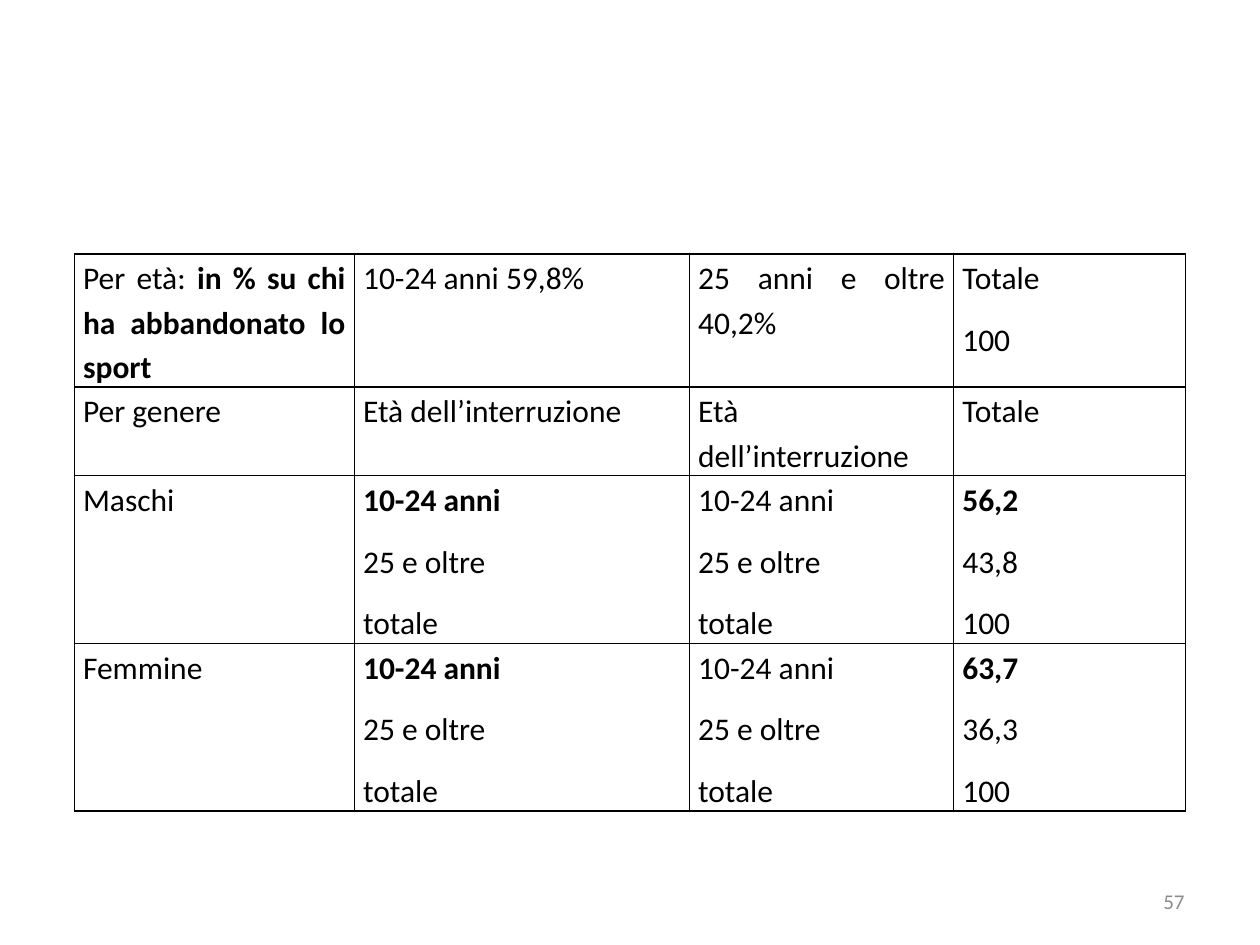
from lxml import etree
from pptx import Presentation
from pptx.dml.color import RGBColor
from pptx.enum.text import MSO_ANCHOR, PP_ALIGN
from pptx.oxml.ns import qn
from pptx.util import Pt

JUSTIFY, RIGHT = PP_ALIGN.JUSTIFY, PP_ALIGN.RIGHT
TOP, MIDDLE = MSO_ANCHOR.TOP, MSO_ANCHOR.MIDDLE
FONT = "Calibri"
COLORS = {"text": "000000", "border": "000000", "page_number": "8C8C8C"}
COLUMN_WIDTHS = [160, 191.5, 151, 132.5]
ROW_HEIGHTS = [76, 50.5, 95.5, 95.5]
AGE_GROUPS = ["10-24 anni", "25 e oltre", "totale"]
INTERRUPTION = ["Età dell’interruzione"]


def gender_row(gender, shares):
    """Return the cells of one gender, with the youngest group in bold."""
    bold_first = [[f"**{column[0]}**", *column[1:]] for column in (AGE_GROUPS, shares)]
    return [[gender], bold_first[0], AGE_GROUPS, bold_first[1]]


ROWS = [
    [["Per età: **in % su chi ha abbandonato lo sport**"], ["10-24 anni 59,8%"],
     ["25 anni e oltre 40,2%"], ["Totale", "100"]],
    [["Per genere"], INTERRUPTION, INTERRUPTION, ["Totale"]],
    gender_row("Maschi", ["56,2", "43,8", "100"]),
    gender_row("Femmine", ["63,7", "36,3", "100"]),
]


def style_run(run, size, color, bold=False):
    """Apply font, size, colour and weight to a run."""
    run.font.name = FONT
    run.font.size = Pt(size)
    run.font.bold = bold
    run.font.color.rgb = RGBColor.from_string(COLORS[color])


def write_paragraph(paragraph, marked_text):
    """Write a justified paragraph whose ** marks enclose bold text."""
    paragraph.alignment = JUSTIFY
    paragraph.line_spacing = 1.15
    paragraph.space_after = Pt(10)
    for index, part in enumerate(marked_text.split("**")):
        if part:
            run = paragraph.add_run()
            run.text = part
            style_run(run, 18, "text", bold=index % 2 == 1)


def add_borders(cell):
    """Draw a thin line on all four sides of a cell."""
    properties = cell._tc.get_or_add_tcPr()
    for index, side in enumerate(("a:lnL", "a:lnR", "a:lnT", "a:lnB")):
        line = etree.Element(qn(side), w=str(Pt(1)))
        fill = etree.SubElement(line, qn("a:solidFill"))
        etree.SubElement(fill, qn("a:srgbClr"), val=COLORS["border"])
        properties.insert(index, line)


def fill_cell(cell, lines):
    """Format a cell and write its lines as paragraphs."""
    cell.fill.background()
    cell.margin_left = cell.margin_right = Pt(5)
    cell.margin_top = cell.margin_bottom = Pt(0)
    cell.vertical_anchor = TOP
    add_borders(cell)
    cell.text_frame.text = "\n".join([""] * len(lines))
    for paragraph, line in zip(cell.text_frame.paragraphs, lines):
        write_paragraph(paragraph, line)


def add_dropout_table(slide):
    """Add the table of sport dropout by age and gender."""
    table = slide.shapes.add_table(
        len(ROWS), len(COLUMN_WIDTHS), Pt(42.5), Pt(145.25),
        Pt(sum(COLUMN_WIDTHS)), Pt(sum(ROW_HEIGHTS))).table
    table.first_row = table.horz_banding = False
    for column, width in zip(table.columns, COLUMN_WIDTHS):
        column.width = Pt(width)
    for row, height, contents in zip(table.rows, ROW_HEIGHTS, ROWS):
        row.height = Pt(height)
        for cell, lines in zip(row.cells, contents):
            fill_cell(cell, lines)


def add_page_number(slide, number):
    """Add the page number at the lower right."""
    frame = slide.shapes.add_textbox(Pt(516), Pt(500.5), Pt(168), Pt(28.75)).text_frame
    frame.word_wrap = True
    frame.vertical_anchor = MIDDLE
    frame.text = number
    paragraph = frame.paragraphs[0]
    paragraph.alignment = RIGHT
    style_run(paragraph.runs[0], 12, "page_number")


def main():
    """Build and save the slide."""
    presentation = Presentation()
    presentation.slide_width, presentation.slide_height = Pt(720), Pt(540)
    slide = presentation.slides.add_slide(presentation.slide_layouts[6])
    add_dropout_table(slide)
    add_page_number(slide, "57")
    presentation.save("out.pptx")


if __name__ == "__main__":
    main()
